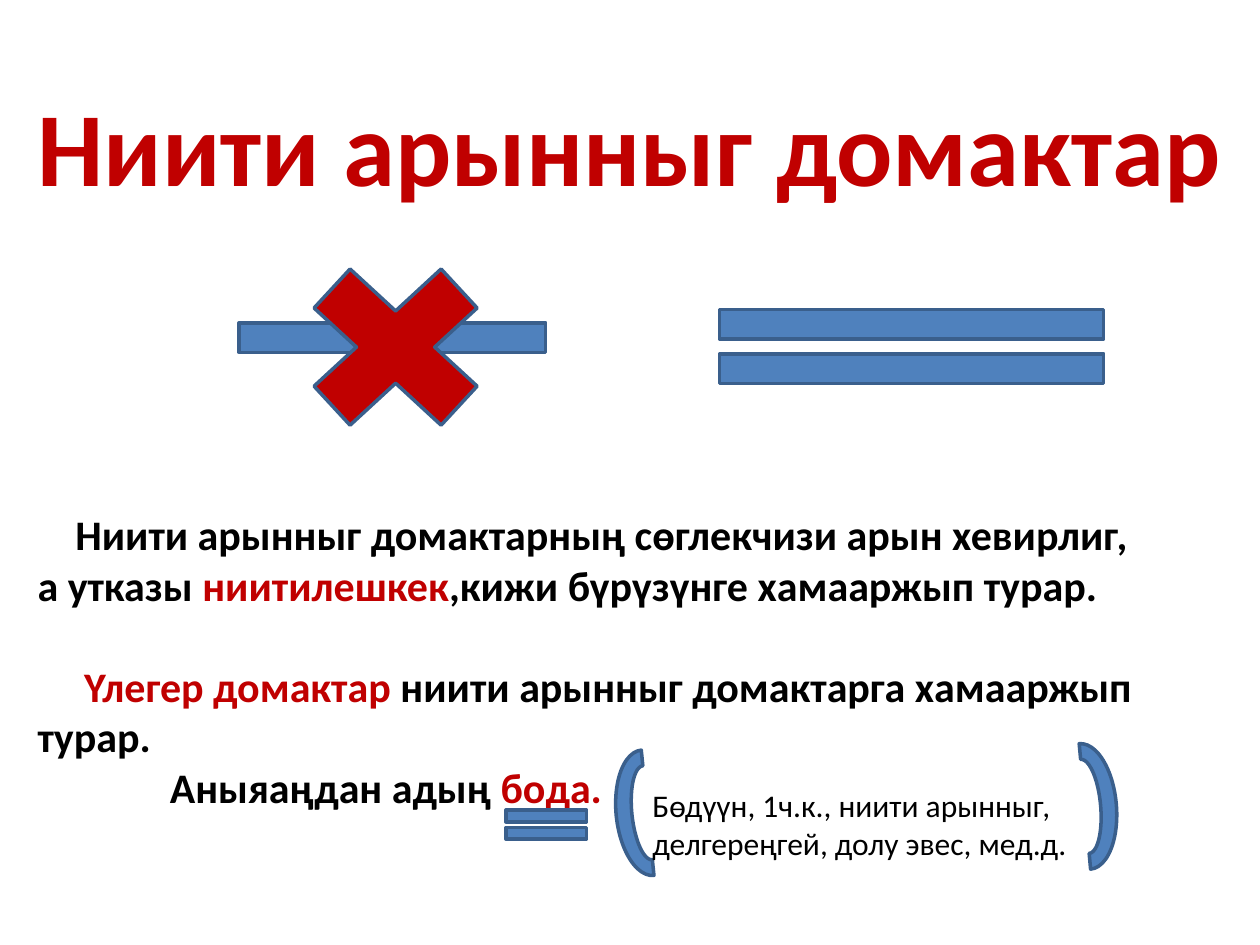
import pptx
import pptx.util
import pptx.dml.color
import pptx.enum.shapes
import pptx.enum.text
from dataclasses import dataclass

Inches = pptx.util.Inches
Kind = pptx.enum.shapes.MSO_SHAPE


@dataclass(frozen=True)
class Theme:
    font: str = "Calibri"
    red: str = "C00000"
    blue: str = "4F81BD"
    edge: str = "3A5F8C"
    ink: str = "000000"
    head: int = 60
    body: int = 24
    note: int = 18
    line: int = 2


THEME = Theme()


def tint(code):
    return pptx.dml.color.RGBColor.from_string(code)


def write(para, runs, size=THEME.body, bold=True, indent=0, before=0):
    """Fill a paragraph with (text, colour) runs."""
    para.alignment = pptx.enum.text.PP_ALIGN.LEFT
    para.space_before = pptx.util.Pt(before)
    if indent:
        para._p.get_or_add_pPr().set("indent", str(Inches(indent)))
    for text, color in runs:
        run = para.add_run()
        run.text = text
        font = run.font
        font.name, font.size, font.bold = THEME.font, pptx.util.Pt(size), bold
        font.color.rgb = tint(color)


def place(item, box):
    item.left, item.top, item.width, item.height = map(Inches, box)


def frame(item):
    text = item.text_frame
    text.word_wrap = True
    text.auto_size = pptx.enum.text.MSO_AUTO_SIZE.NONE
    text.vertical_anchor = pptx.enum.text.MSO_ANCHOR.TOP
    return text


def panel(slide, box):
    return frame(slide.shapes.add_textbox(*map(Inches, box)))


def sign(slide, kind, box, fill=THEME.blue, turn=0):
    item = slide.shapes.add_shape(kind, *map(Inches, box))
    item.shadow.inherit = False
    item.rotation = turn
    item.fill.solid()
    item.fill.fore_color.rgb = tint(fill)
    item.line.color.rgb = tint(THEME.edge)
    item.line.width = pptx.util.Pt(THEME.line)


def title(slide, box):
    item = slide.shapes.title
    place(item, box)
    write(frame(item).paragraphs[0], [("Ниити арынныг домактар", THEME.red)],
          size=THEME.head)


def signs(slide, box):
    """Crossed-out single line beside a double line."""
    x, y, w, h = box
    sign(slide, Kind.MATH_EQUAL, (x + w - 4.15, y + 0.39, 4.15, 1))
    sign(slide, Kind.MATH_MINUS, (x, y + 0.32, 3.31, 1))
    sign(slide, Kind.MATH_MULTIPLY, (x + 0.71, y, 1.94, h), fill=THEME.red)


def rules(slide, box):
    ink, red = THEME.ink, THEME.red
    # runs, first-line indent, space before
    lines = [
        ([("Ниити арынныг домактарның сөглекчизи арын хевирлиг,", ink)], 0.3, 0),
        ([("а утказы ", ink), ("ниитилешкек", red),
          (",кижи бүрүзүнге хамааржып турар.", ink)], 0, 0),
        ([("Үлегер домактар ", red),
          ("ниити арынныг домактарга хамааржып турар.", ink)], 0.37, 29),
        ([("Аныяаңдан адың ", ink), ("бода.", red)], 1.05, 0),
    ]
    text = panel(slide, box)
    for i, (runs, indent, before) in enumerate(lines):
        para = text.add_paragraph() if i else text.paragraphs[0]
        write(para, runs, indent=indent, before=before)


def sample(slide, box):
    """Small double line, then a note between two curved brackets."""
    x, y, w, h = box
    sign(slide, Kind.MATH_EQUAL, (x, y + 0.2, 0.87, 0.39))
    sign(slide, Kind.BLOCK_ARC, (x + 0.74, y + 0.05, 1, 0.5), turn=264.2)
    text = panel(slide, (x + 1.18, y + 0.04, 3.54, h - 0.04))
    write(text.paragraphs[0],
          [("Бөдүүн, 1ч.к., ниити арынныг, делгереңгей, долу эвес, мед.д.",
            THEME.ink)], size=THEME.note, bold=False)
    sign(slide, Kind.BLOCK_ARC, (x + w - 1, y, 1, 0.5), turn=84.8)


def main():
    deck = pptx.Presentation()
    deck.slide_width, deck.slide_height = Inches(10), Inches(7.5)
    slide = deck.slides.add_slide(deck.slide_layouts[5])
    title(slide, (0.2, 0.6, 9.8, 1.11))
    signs(slide, (1.46, 1.86, 7.85, 1.79))
    rules(slide, (0.2, 3.99, 9.37, 2.52))
    sample(slide, (3.9, 6.15, 5.21, 0.75))
    deck.save("out.pptx")


if __name__ == "__main__":
    main()
